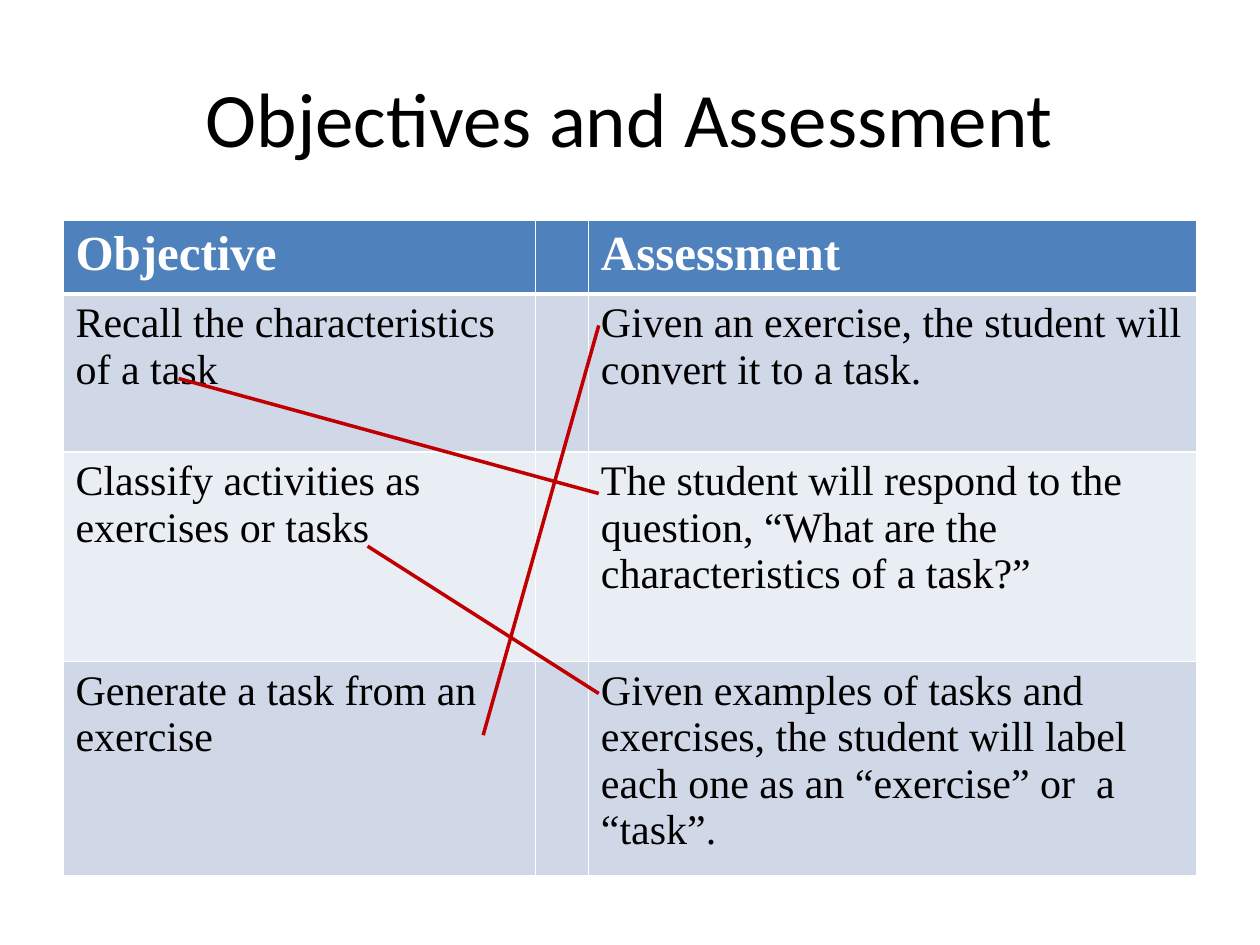
from collections import namedtuple

from lxml.etree import SubElement
from pptx import Presentation
from pptx.dml.color import RGBColor
from pptx.enum.shapes import MSO_CONNECTOR as Connector
from pptx.enum.text import MSO_ANCHOR as Anchor, PP_ALIGN as Align
from pptx.oxml.ns import qn
from pptx.util import Cm, Pt

Box = namedtuple("Box", "left top width height")

BLACK = RGBColor(0x00, 0x00, 0x00)
WHITE = RGBColor(0xFF, 0xFF, 0xFF)
BLUE = RGBColor(0x4F, 0x81, 0xBD)
BANDS = RGBColor(0xE9, 0xED, 0xF4), RGBColor(0xD0, 0xD8, 0xE8)
RED = RGBColor(0xC0, 0x00, 0x00)

TITLE_BOX = Box(1.27, 0.76, 22.86, 3.18)
TABLE_BOX = Box(1.27, 4.45, 22.86, 12.52)
COLUMNS = 9.53, 1.06, 12.27
ROWS = 1.48, 3.18, 4.23, 3.63
TEXTS = [
    ("Objective", "", "Assessment"),
    (
        "Recall the characteristics of a task",
        "",
        "Given an exercise, the student will convert it to a task.",
    ),
    (
        "Classify activities as exercises or tasks",
        "",
        "The student will respond to the question, “What are the characteristics of a task?”",
    ),
    (
        "Generate a task from an exercise",
        "",
        "Given examples of tasks and exercises, the student will label each one "
        "as an “exercise” or  a “task”.",
    ),
]
MATCH_END = 10.8
MATCHES = [(2.33, 3.18, 5.5), (6.14, 6.56, 9.53), (8.47, 10.37, 2.11)]


def add_title(page, box, text):
    """Place the centred slide title in the box."""
    frame = page.shapes.add_textbox(*map(Cm, box)).text_frame
    frame.word_wrap = True
    frame.vertical_anchor = Anchor.MIDDLE
    para = frame.paragraphs[0]
    para.text = text
    para.alignment = Align.CENTER
    para.font.name = "Calibri"
    para.font.size = Pt(44)
    para.font.color.rgb = BLACK


def add_borders(cell, top, bottom):
    """Draw white cell borders with the given top and bottom widths in points."""
    properties = cell._tc.get_or_add_tcPr()
    for side, width in (("L", 1), ("R", 1), ("T", top), ("B", bottom)):
        line = SubElement(properties, qn(f"a:ln{side}"), w=str(Pt(width)))
        fill = SubElement(line, qn("a:solidFill"))
        SubElement(fill, qn("a:srgbClr"), val=str(WHITE))


def fill_cell(cell, row, text):
    """Write and style one cell according to its row."""
    header = row == 0
    add_borders(cell, 3 if row == 1 else 1, 3 if header else 1)
    cell.fill.solid()
    cell.fill.fore_color.rgb = BLUE if header else BANDS[row % 2]
    para = cell.text_frame.paragraphs[0]
    para.text = text
    para.font.name = "Times New Roman"
    para.font.size = Pt(28 if header else 24)
    para.font.bold = header
    para.font.color.rgb = WHITE if header else BLACK


def add_pairs_table(page, box):
    """Place the table of objectives and assessments in the box."""
    table = page.shapes.add_table(len(ROWS), len(COLUMNS), *map(Cm, box)).table
    for column, width in zip(table.columns, COLUMNS):
        column.width = Cm(width)
    for index, (row, height) in enumerate(zip(table.rows, ROWS)):
        row.height = Cm(height)
        for cell, text in zip(row.cells, TEXTS[index]):
            fill_cell(cell, index, text)


def add_matches(page, box):
    """Join each objective to its assessment across the table box."""
    for start_x, start_y, end_y in MATCHES:
        line = page.shapes.add_connector(
            Connector.STRAIGHT,
            Cm(box.left + start_x),
            Cm(box.top + start_y),
            Cm(box.left + MATCH_END),
            Cm(box.top + end_y),
        )
        line.line.color.rgb = RED
        line.line.width = Pt(2)
        SubElement(line._element.spPr, qn("a:effectLst"))


def main():
    """Build the slide and save the deck."""
    deck = Presentation()
    deck.slide_width, deck.slide_height = Cm(25.4), Cm(19.05)
    page = deck.slides.add_slide(deck.slide_layouts[6])
    add_title(page, TITLE_BOX, "Objectives and Assessment")
    add_pairs_table(page, TABLE_BOX)
    add_matches(page, TABLE_BOX)
    deck.save("out.pptx")


if __name__ == "__main__":
    main()
